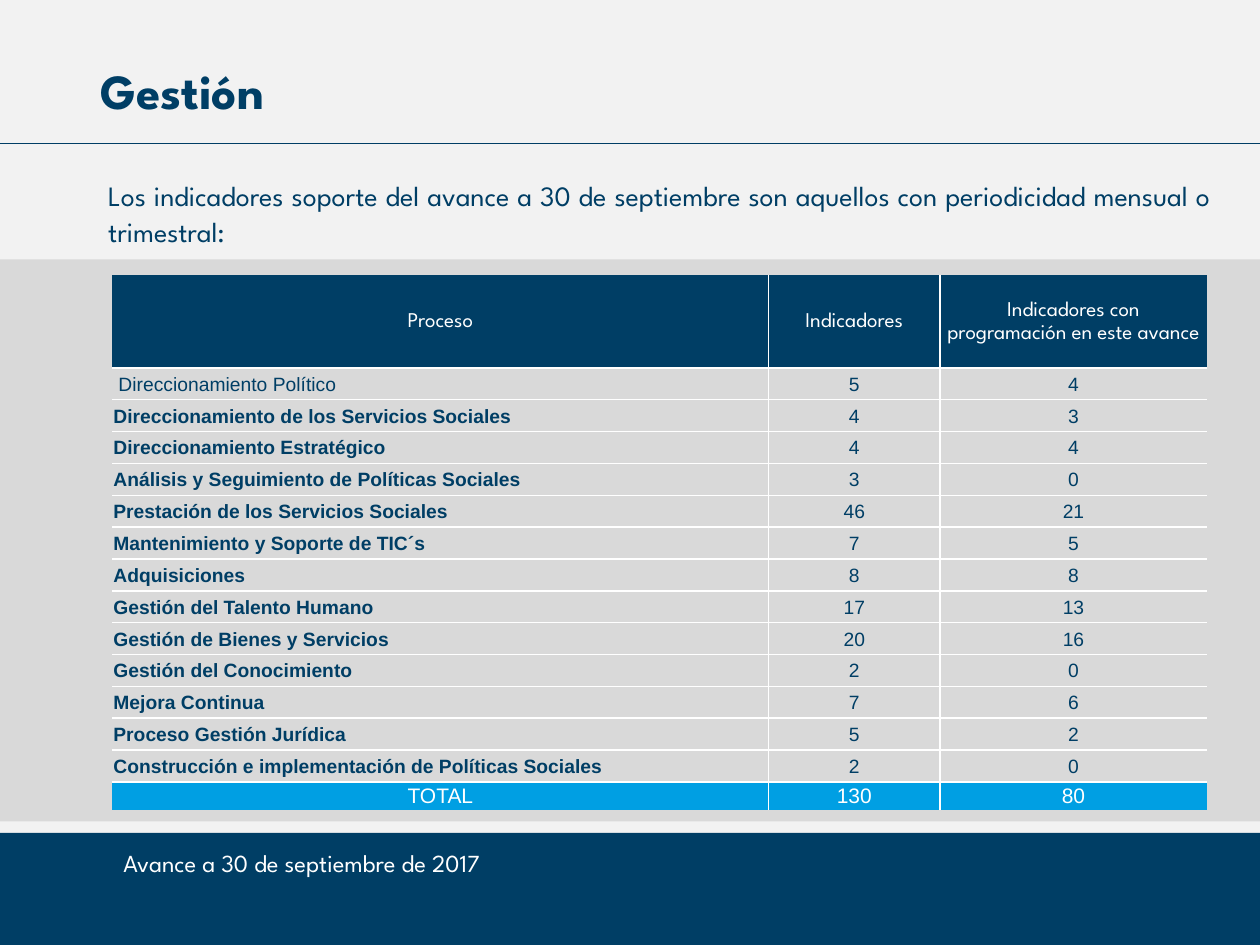
from dataclasses import dataclass

from lxml import etree
from pptx import Presentation
from pptx.dml.color import RGBColor
from pptx.enum.shapes import MSO_CONNECTOR, MSO_SHAPE
from pptx.enum.text import MSO_ANCHOR, PP_ALIGN
from pptx.oxml.ns import qn
from pptx.util import Inches, Pt

RECTANGLE = MSO_SHAPE.RECTANGLE
STRAIGHT = MSO_CONNECTOR.STRAIGHT
TOP, MIDDLE = MSO_ANCHOR.TOP, MSO_ANCHOR.MIDDLE
LEFT, CENTER, JUSTIFY = PP_ALIGN.LEFT, PP_ALIGN.CENTER, PP_ALIGN.JUSTIFY


@dataclass(frozen=True)
class Theme:
    """Colours, fonts and type sizes of the slide."""
    navy: str = "003E65"
    blue: str = "009FE3"
    white: str = "FFFFFF"
    light: str = "F2F2F2"
    grey: str = "D9D9D9"
    display: str = "League Spartan"
    body: str = "Arial"
    title_size: int = 28
    intro_size: int = 16
    footer_size: int = 14
    head_size: int = 12
    cell_size: int = 11
    spacing: float = 1.07


THEME = Theme()
HEADERS = ("Proceso", "Indicadores", "Indicadores con programación en este avance")
PROCESSES = (
    ("Direccionamiento Político", 5, 4),
    ("Direccionamiento de los Servicios Sociales", 4, 3),
    ("Direccionamiento Estratégico", 4, 4),
    ("Análisis y Seguimiento de Políticas Sociales", 3, 0),
    ("Prestación de los Servicios Sociales", 46, 21),
    ("Mantenimiento y Soporte de TIC´s", 7, 5),
    ("Adquisiciones", 8, 8),
    ("Gestión del Talento Humano", 17, 13),
    ("Gestión de Bienes y Servicios", 20, 16),
    ("Gestión del Conocimiento", 2, 0),
    ("Mejora Continua", 7, 6),
    ("Proceso Gestión Jurídica", 5, 2),
    ("Construcción e implementación de Políticas Sociales", 2, 0),
)
TOTALS = ("TOTAL", 130, 80)
COLUMN_WIDTHS = (5.21, 1.36, 2.12)
TABLE_HEIGHT, HEADER_HEIGHT, TOTAL_HEIGHT = 4.25, 0.74, 0.22


def rgb(color):
    """Turn a hex string into a colour."""
    return RGBColor.from_string(color)


def add_band(slide, top, height, color):
    """Add a full-width rectangle without outline."""
    shape = slide.shapes.add_shape(RECTANGLE, 0, Inches(top), Inches(10), Inches(height))
    shape.shadow.inherit = False
    shape.fill.solid()
    shape.fill.fore_color.rgb = rgb(color)
    shape.line.fill.background()


def add_rule(slide, top):
    """Add the full-width line below the title."""
    connector = slide.shapes.add_connector(STRAIGHT, Inches(10), Inches(top), 0, Inches(top))
    connector.line.color.rgb = rgb(THEME.navy)
    connector.line.width = Pt(1)
    etree.SubElement(connector._element.spPr, qn("a:effectLst"))


def write_text(frame, text, size, color, font, align=LEFT, bold=False, spacing=None):
    """Write one run into the first paragraph of a text frame."""
    paragraph = frame.paragraphs[0]
    paragraph.alignment = align
    paragraph.line_spacing = spacing
    run = paragraph.add_run()
    run.text = text
    run.font.size = Pt(size)
    run.font.name = font
    run.font.bold = bold
    run.font.color.rgb = rgb(color)


def add_text(slide, box, text, size, color, anchor=TOP, wrap=True, **style):
    """Add a text box in the display font."""
    frame = slide.shapes.add_textbox(*(Inches(value) for value in box)).text_frame
    frame.word_wrap = wrap
    frame.vertical_anchor = anchor
    write_text(frame, text, size, color, THEME.display, **style)


def set_borders(cell, visible):
    """Draw white lines on the visible sides and clear the others."""
    properties = cell._tc.get_or_add_tcPr()
    for position, side in enumerate("LRTB"):
        line = etree.Element(qn(f"a:ln{side}"), w=str(Pt(1)))
        if side in visible:
            fill = etree.SubElement(line, qn("a:solidFill"))
            etree.SubElement(fill, qn("a:srgbClr"), val=THEME.white)
        else:
            etree.SubElement(line, qn("a:noFill"))
        properties.insert(position, line)


def fill_cell(cell, text, color, margin, fill=None, **style):
    """Set the text, margins and fill of a table cell."""
    cell.vertical_anchor = MIDDLE
    cell.margin_left = cell.margin_right = Inches(margin)
    cell.margin_top = cell.margin_bottom = 0
    if fill:
        cell.fill.solid()
        cell.fill.fore_color.rgb = rgb(fill)
    else:
        cell.fill.background()
    write_text(cell.text_frame, str(text), color=color, **style)


def fill_process_row(table, row, values, first):
    """Fill one process row, whose name is bold after the first one."""
    for column, value in enumerate(values):
        is_name = column == 0
        fill_cell(table.cell(row, column), value, THEME.navy,
                  margin=0.05 if first and is_name else 0.01,
                  size=THEME.cell_size, font=THEME.body, spacing=THEME.spacing,
                  align=LEFT if is_name else CENTER, bold=is_name and not first)


def add_indicator_table(slide):
    """Add the table of indicators by process."""
    last_row, last_column = len(PROCESSES) + 1, len(HEADERS) - 1
    table = slide.shapes.add_table(last_row + 1, last_column + 1, Inches(0.89), Inches(2.18),
                                   Inches(sum(COLUMN_WIDTHS)), Inches(TABLE_HEIGHT)).table
    table.horz_banding = False
    for column, width in zip(table.columns, COLUMN_WIDTHS):
        column.width = Inches(width)
    body_height = (TABLE_HEIGHT - HEADER_HEIGHT - TOTAL_HEIGHT) / len(PROCESSES)
    heights = [HEADER_HEIGHT, *[body_height] * len(PROCESSES), TOTAL_HEIGHT]
    for row, height in zip(table.rows, heights):
        row.height = Inches(height)

    for column, (header, total) in enumerate(zip(HEADERS, TOTALS)):
        spacing = Pt(13) if column == last_column else THEME.spacing
        fill_cell(table.cell(0, column), header, THEME.white, 0.05, THEME.navy,
                  size=THEME.head_size, font=THEME.display, align=CENTER, spacing=spacing)
        fill_cell(table.cell(last_row, column), total, THEME.white, 0.05, THEME.blue,
                  size=THEME.head_size, font=THEME.body, align=CENTER, spacing=THEME.spacing)
    for row, values in enumerate(PROCESSES, start=1):
        fill_process_row(table, row, values, first=row == 1)

    for row in range(last_row + 1):
        for column in range(last_column + 1):
            inner = {"L": column > 0, "R": column < last_column,
                     "T": row > 0, "B": row < last_row}
            set_borders(table.cell(row, column), [side for side in inner if inner[side]])


def main():
    """Build the slide and save it."""
    presentation = Presentation()
    presentation.slide_width, presentation.slide_height = Inches(10), Inches(7.5)
    slide = presentation.slides.add_slide(presentation.slide_layouts[6])
    add_band(slide, 0, 7.43, THEME.light)
    add_band(slide, 6.61, 0.89, THEME.navy)
    add_text(slide, (0.57, 6.65, 3.65, 0.4), "Avance a 30 de septiembre de 2017",
             THEME.footer_size, THEME.white, anchor=MIDDLE, wrap=False, align=CENTER)
    add_band(slide, 2.06, 4.46, THEME.grey)
    add_text(slide, (0.76, 1.35, 8.95, 0.65),
             "Los indicadores soporte del avance a 30 de septiembre son aquellos "
             "con periodicidad mensual o trimestral:",
             THEME.intro_size, THEME.navy, align=JUSTIFY, spacing=THEME.spacing)
    add_text(slide, (0.7, 0.38, 8.62, 0.67), "Gestión",
             THEME.title_size, THEME.navy, anchor=MIDDLE, bold=True)
    add_rule(slide, 1.14)
    add_indicator_table(slide)
    presentation.save("out.pptx")


if __name__ == "__main__":
    main()
